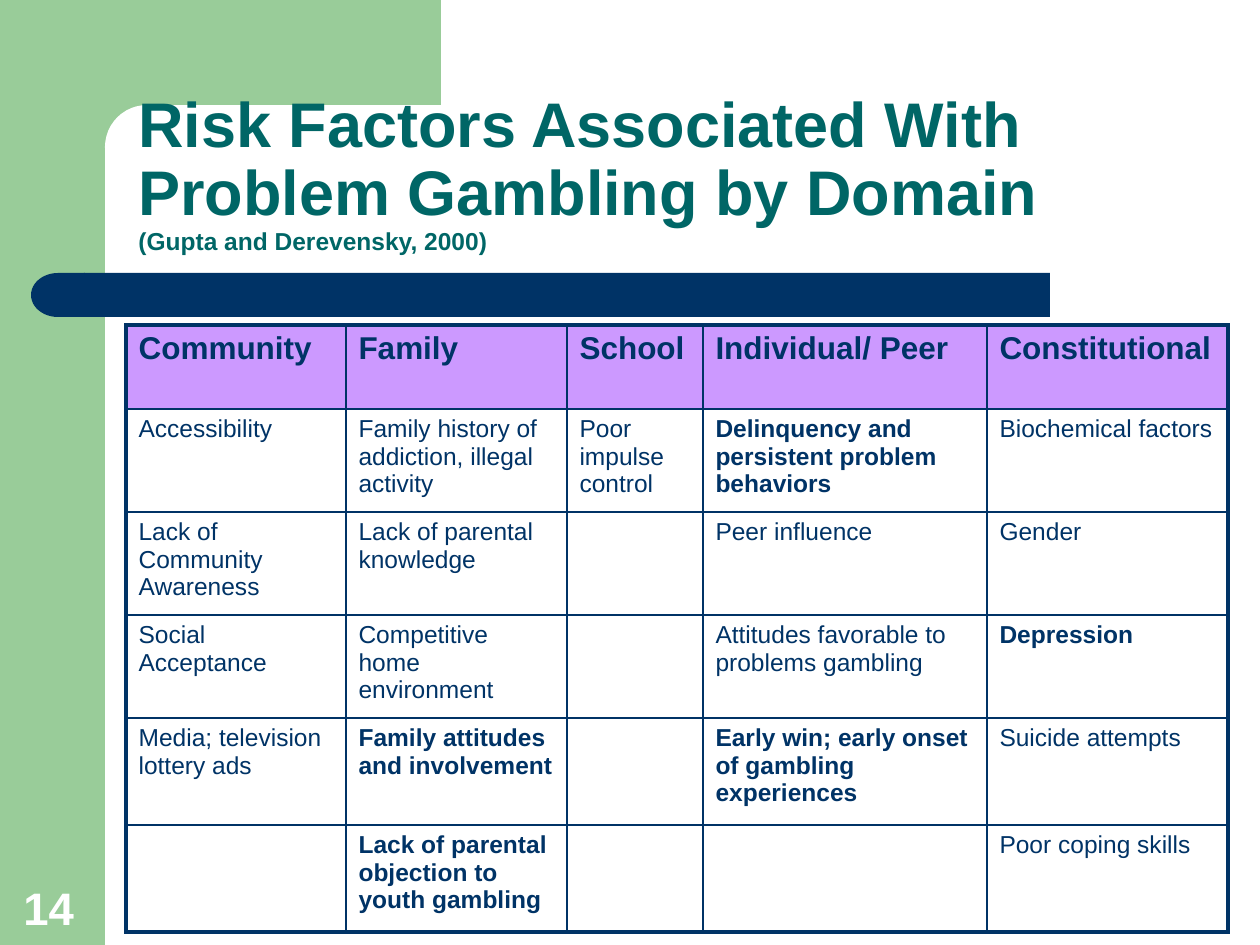
"""Build the slide on risk factors of problem gambling by domain."""
from lxml import etree
from pptx import Presentation
from pptx.dml.color import RGBColor
from pptx.enum.shapes import MSO_SHAPE
from pptx.enum.text import MSO_ANCHOR
from pptx.oxml.ns import qn
from pptx.util import Emu, Pt

RECT = MSO_SHAPE.RECTANGLE
ROUND = MSO_SHAPE.ROUNDED_RECTANGLE
DELAY = MSO_SHAPE.FLOWCHART_DELAY
BOTTOM = MSO_ANCHOR.BOTTOM

FONT = "Arial"
COLORS = {
    "green": "99CC99",
    "white": "FFFFFF",
    "navy": "003366",
    "teal": "006666",
    "violet": "CC99FF",
}
COL_WIDTHS = [220, 221, 136, 284, 241]
ROW_HEIGHTS = [84, 103, 103, 103, 107, 107]
ROWS = [
    ["Community", "Family", "School", "Individual/ Peer", "Constitutional"],
    ["Accessibility", "Family history of addiction, illegal activity",
     "Poor impulse control", "Delinquency and persistent problem behaviors",
     "Biochemical factors"],
    ["Lack of Community Awareness", "Lack of parental knowledge", "",
     "Peer influence", "Gender"],
    ["Social Acceptance", "Competitive home environment", "",
     "Attitudes favorable to problems gambling", "Depression"],
    ["Media; television lottery ads", "Family attitudes and involvement", "",
     "Early win; early onset of gambling experiences", "Suicide attempts"],
    ["", "Lack of parental objection to youth gambling", "", "",
     "Poor coping skills"],
]
BOLD_CELLS = {(1, 3), (3, 4), (4, 1), (4, 3), (5, 1)}


def px(n):
    return Emu(round(n * 914400 / 126))


def rgb(name):
    return RGBColor.from_string(COLORS[name])


def style(font, size, color, bold=True):
    font.name = FONT
    font.size = Pt(size)
    font.bold = bold
    font.color.rgb = rgb(color)


def add_block(s, kind, box, color):
    sp = s.shapes.add_shape(kind, *map(px, box))
    sp.shadow.inherit = False
    sp.fill.solid()
    sp.fill.fore_color.rgb = rgb(color)
    sp.line.fill.background()
    return sp


def add_text(s, box, text, size, color):
    tf = s.shapes.add_textbox(*map(px, box)).text_frame
    tf.word_wrap = True
    tf.vertical_anchor = BOTTOM
    p = tf.paragraphs[0]
    p.text = text
    style(p.font, size, color)
    return p


def add_title(s):
    p = add_text(s, (126, 105, 1102, 157),
                 "Risk Factors Associated With Problem Gambling by Domain \v",
                 36, "teal")
    p.line_spacing = 0.9
    r = p.add_run()
    r.text = "(Gupta and Derevensky, 2000)"
    r.font.size = Pt(14)


def set_borders(cell, widths):
    tc_pr = cell._tc.get_or_add_tcPr()
    for i, (side, width) in enumerate(widths.items()):
        ln = etree.Element(qn(f"a:ln{side}"), w=str(Pt(width)))
        fill = etree.SubElement(ln, qn("a:solidFill"))
        etree.SubElement(fill, qn("a:srgbClr"), val=COLORS["navy"])
        tc_pr.insert(i, ln)


def add_table(s, left, top):
    n_rows, n_cols = len(ROW_HEIGHTS), len(COL_WIDTHS)
    table = s.shapes.add_table(n_rows, n_cols, px(left), px(top),
                               px(sum(COL_WIDTHS)), px(sum(ROW_HEIGHTS))).table
    for column, width in zip(table.columns, COL_WIDTHS):
        column.width = px(width)
    for i, (row, height) in enumerate(zip(table.rows, ROW_HEIGHTS)):
        row.height = px(height)
        for j, cell in enumerate(row.cells):
            header = i == 0
            cell.fill.solid()
            cell.fill.fore_color.rgb = rgb("violet" if header else "white")
            p = cell.text_frame.paragraphs[0]
            p.text = ROWS[i][j]
            style(p.font, 18 if header else 14, "navy",
                  header or (i, j) in BOLD_CELLS)
            outer = {"L": j == 0, "R": j == n_cols - 1,
                     "T": header, "B": i == n_rows - 1}
            set_borders(cell, {side: 2.25 if edge else 1
                               for side, edge in outer.items()})


def main():
    prs = Presentation()
    prs.slide_width, prs.slide_height = px(1260), px(945)
    s = prs.slides.add_slide(prs.slide_layouts[6])
    add_block(s, RECT, (0, 0, 105, 945), "green")
    add_block(s, RECT, (94, 0, 347, 147), "green")
    add_block(s, ROUND, (105, 105, 703, 84), "white").adjustments[0] = 0.5
    add_block(s, RECT, (84, 273, 966, 44), "navy")
    add_block(s, DELAY, (31, 273, 54, 44), "navy").rotation = 180
    add_title(s)
    add_table(s, 126, 325)
    add_text(s, (11, 874, 81, 67), "14", 26, "white")
    prs.save("out.pptx")


if __name__ == "__main__":
    main()
